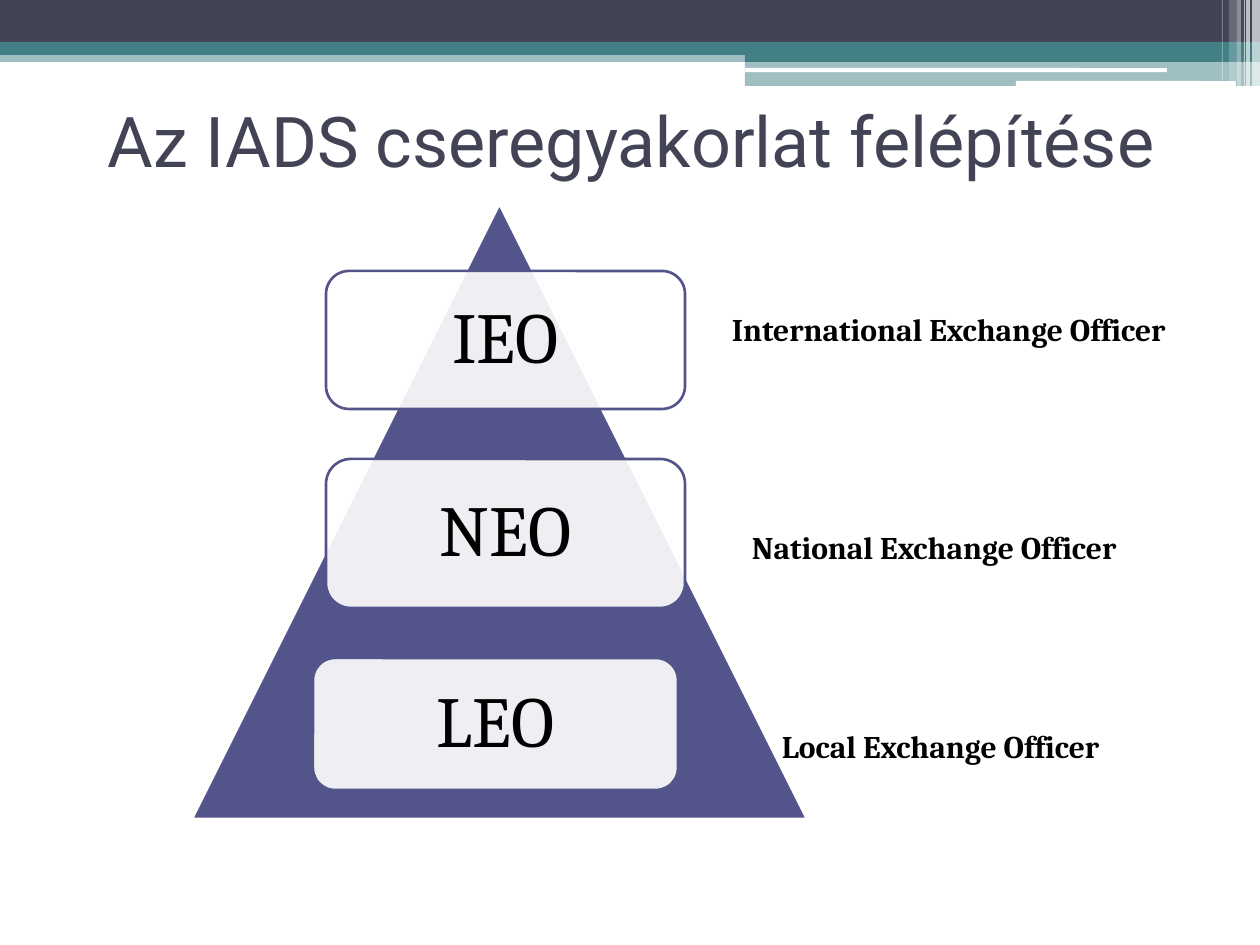
from dataclasses import dataclass
from lxml.etree import SubElement
from pptx import Presentation
from pptx.dml.color import RGBColor
from pptx.enum.shapes import MSO_SHAPE
from pptx.enum.text import MSO_ANCHOR, PP_ALIGN
from pptx.oxml.ns import qn
from pptx.util import Pt

EMU_PER_PX = 914400 / 126
TITLE_ONLY = 5


@dataclass(frozen=True)
class Theme:
    ink: str = "424456"
    teal: str = "438086"
    violet: str = "53548A"
    white: str = "FFFFFF"
    black: str = "000000"
    title_font: str = "Roboto"
    body_font: str = "Cambria"
    title_size: int = 40
    level_size: int = 41
    label_size: int = 18
    line_width: float = 1.5


THEME = Theme()


def px(*lengths):
    return [round(length * EMU_PER_PX) for length in lengths]


def write(shape, text, *, font, size, color=THEME.black, bold=False,
          align=PP_ALIGN.LEFT, anchor=MSO_ANCHOR.TOP, spacing=None,
          insets=(13, 6, 13, 6)):
    frame = shape.text_frame
    frame.word_wrap = True
    frame.vertical_anchor = anchor
    (frame.margin_left, frame.margin_top,
     frame.margin_right, frame.margin_bottom) = px(*insets)
    paragraph = frame.paragraphs[0]
    paragraph.alignment = align
    paragraph.line_spacing = spacing
    run = paragraph.add_run()
    run.text = text
    run.font.name = font
    run.font.size = Pt(size)
    run.font.bold = bold
    run.font.color.rgb = RGBColor.from_string(color)


def draw(shapes, preset, box, fill, opacity=100, line=None):
    shape = shapes.add_shape(preset, *px(*box))
    shape.shadow.inherit = False
    shape.fill.solid()
    shape.fill.fore_color.rgb = RGBColor.from_string(fill)
    if opacity < 100:
        color = shape.element.spPr.find(f"{qn('a:solidFill')}/{qn('a:srgbClr')}")
        SubElement(color, qn("a:alpha"), val=str(opacity * 1000))
    if line:
        shape.line.color.rgb = RGBColor.from_string(line)
        shape.line.width = Pt(THEME.line_width)
    else:
        shape.line.fill.background()
    return shape


def add_header(slide, box):
    left, top, width, height = box
    step = 745
    bands = [
        (0, 50, width, 12, THEME.teal, 50),
        (0, 0, width, 42, THEME.ink, 100),
        (0, 42, width, 13, THEME.teal, 100),
        (step, 49, width - step, 13, THEME.teal, 100),
        (step, 61, width - step, 25, THEME.teal, 50),
    ]
    highlights = [(step, 68, 422, 4), (1016, 81, 220, 5)]
    stripes = [(1252, 8, height, 65), (1246, 4, height, 65), (1244, 1, height, 60),
               (1237, 4, height, 40), (1229, 8, 81, 20), (1222, 1, 81, 30)]
    for x, y, w, h, color, opacity in bands:
        draw(slide.shapes, MSO_SHAPE.RECTANGLE, (left + x, top + y, w, h), color, opacity)
    for x, y, w, h in highlights:
        draw(slide.shapes, MSO_SHAPE.ROUNDED_RECTANGLE, (left + x, top + y, w, h), THEME.white)
    for x, w, h, opacity in stripes:
        draw(slide.shapes, MSO_SHAPE.RECTANGLE, (left + x, top, w, h), THEME.white, opacity)


def add_title(slide, box, text):
    title = slide.shapes.title
    title.left, title.top, title.width, title.height = px(*box)
    write(title, text, font=THEME.title_font, size=THEME.title_size, color=THEME.ink,
          anchor=MSO_ANCHOR.MIDDLE, insets=(44, 6, 13, 6))


def add_pyramid(slide, box, levels):
    left, top, width, height = box
    pyramid = slide.shapes.add_group_shape()
    draw(pyramid.shapes, MSO_SHAPE.ISOSCELES_TRIANGLE, box, THEME.violet, line=THEME.white)
    for level, (x, y, w, h) in levels:
        card = draw(pyramid.shapes, MSO_SHAPE.ROUNDED_RECTANGLE,
                    (left + x, top + y, w, h), THEME.white, 90, THEME.violet)
        write(card, level, font=THEME.body_font, size=THEME.level_size,
              align=PP_ALIGN.CENTER, anchor=MSO_ANCHOR.MIDDLE, spacing=0.9,
              insets=(15, 15, 15, 15))


def add_officers(slide, box, officers):
    left, top, width, height = box
    for officer, x, y in officers:
        label = slide.shapes.add_textbox(*px(left + x, top + y, width - x, 50))
        write(label, officer, font=THEME.body_font, size=THEME.label_size, bold=True)


def main():
    deck = Presentation()
    deck.slide_width, deck.slide_height = px(1260, 945)
    slide = deck.slides.add_slide(deck.slide_layouts[TITLE_ONLY])
    add_header(slide, (0, 0, 1260, 86))
    add_title(slide, (64, 66, 1134, 147), "Az IADS cseregyakorlat felépítése")
    add_pyramid(slide, (192, 204, 615, 615), [
        ("IEO", (134, 67, 359, 138)),
        ("NEO", (134, 255, 359, 149)),
        ("LEO", (121, 454, 365, 132)),
    ])
    add_officers(slide, (719, 304, 541, 467), [
        ("International Exchange Officer", 0, 0),
        ("National Exchange Officer", 20, 218),
        ("Local Exchange Officer", 50, 417),
    ])
    deck.save("out.pptx")


if __name__ == "__main__":
    main()
